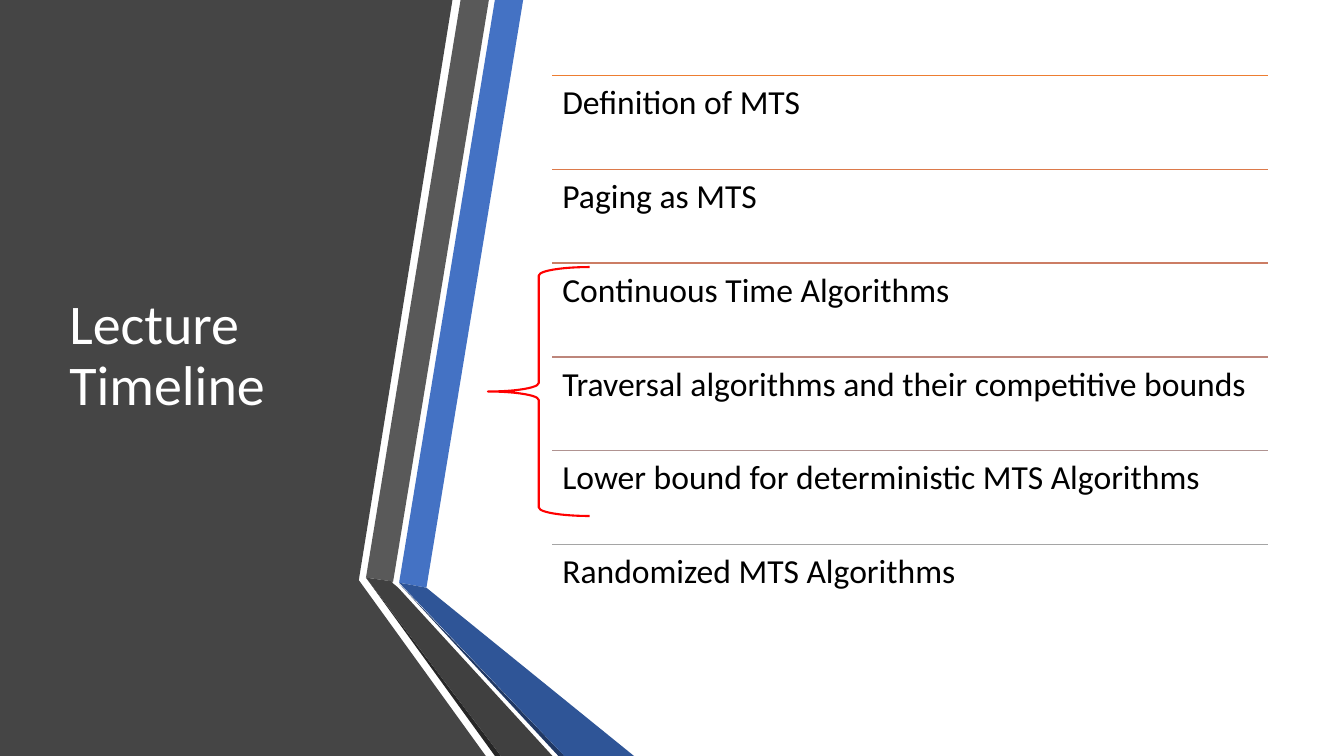
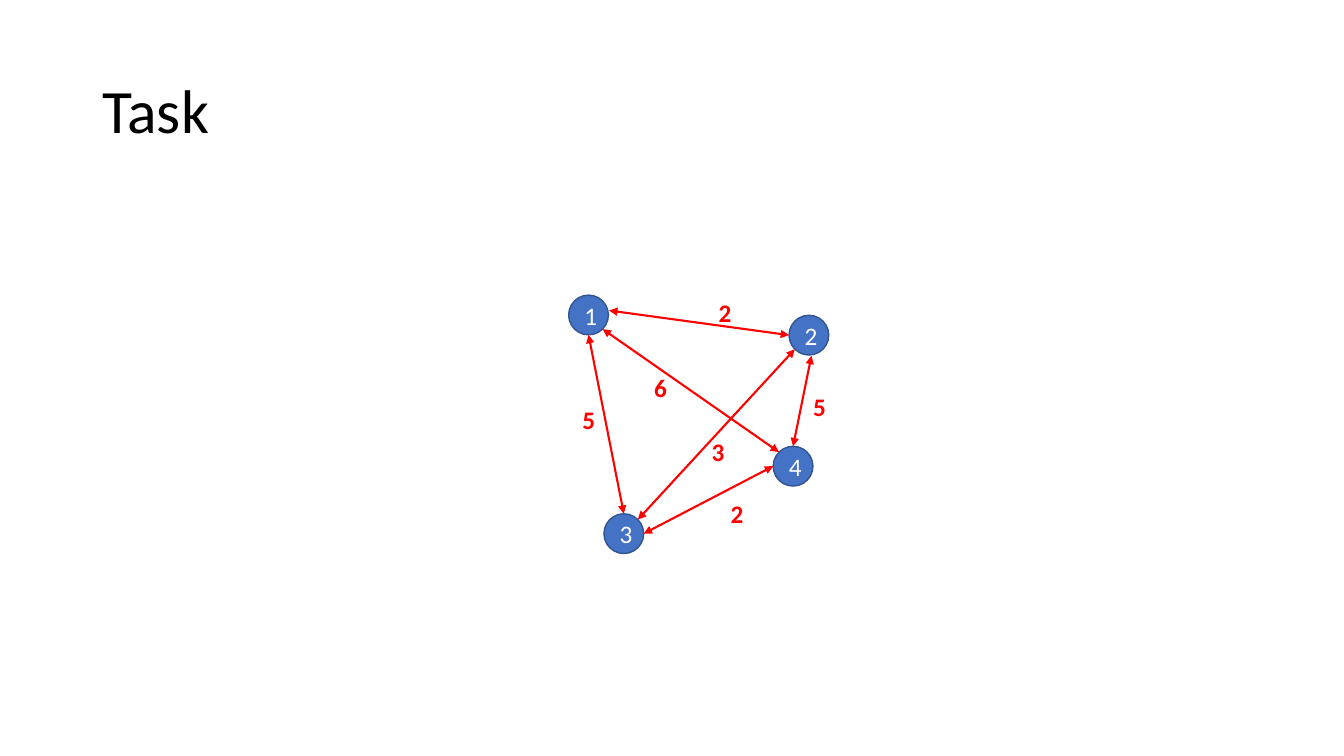
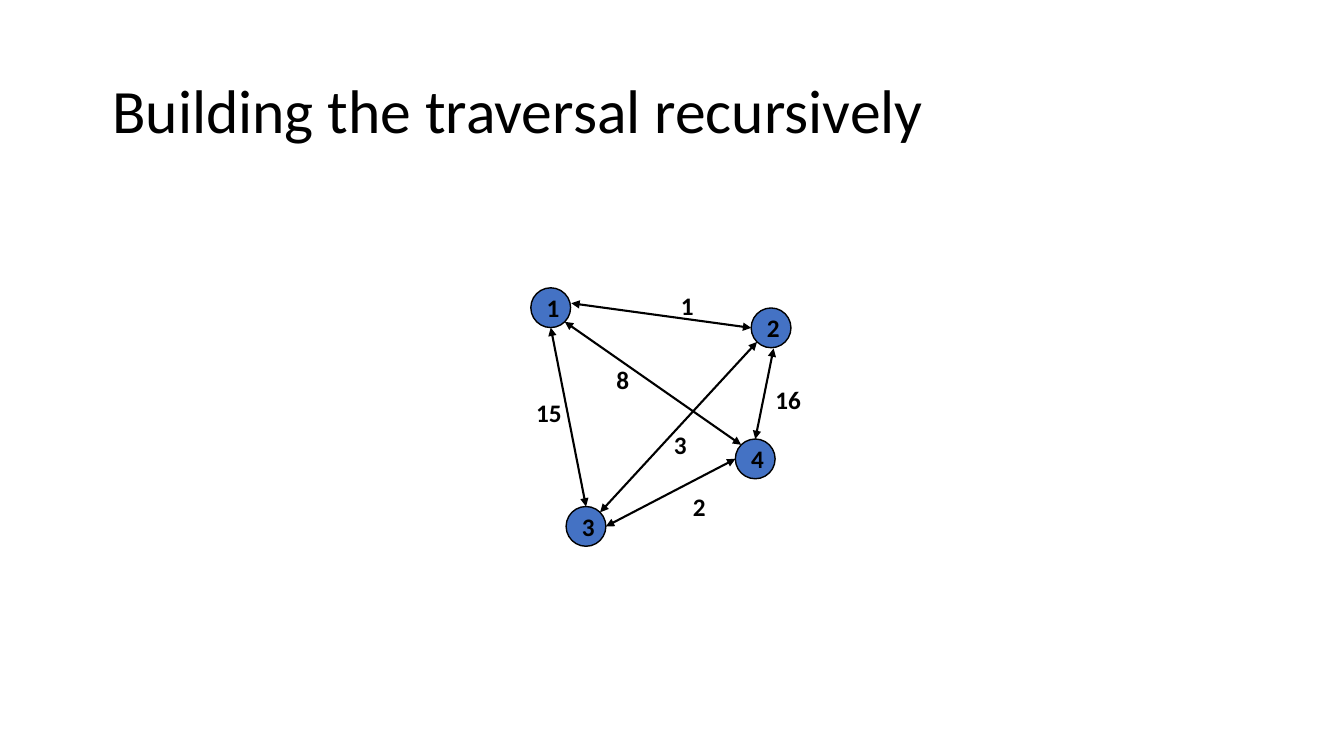
from dataclasses import dataclass
from typing import NamedTuple

from lxml import etree
from pptx import Presentation
from pptx.dml.color import RGBColor
from pptx.enum.shapes import MSO_CONNECTOR, MSO_SHAPE
from pptx.enum.text import MSO_ANCHOR, MSO_AUTO_SIZE, PP_ALIGN
from pptx.oxml.ns import qn
from pptx.util import Pt

STRAIGHT = MSO_CONNECTOR.STRAIGHT
ELLIPSE, LEFT_BRACE = MSO_SHAPE.OVAL, MSO_SHAPE.LEFT_BRACE
TOP, MIDDLE = MSO_ANCHOR.TOP, MSO_ANCHOR.MIDDLE
GROW = MSO_AUTO_SIZE.SHAPE_TO_FIT_TEXT
LEFT, CENTER = PP_ALIGN.LEFT, PP_ALIGN.CENTER

FONT = "Calibri"
BLACK, WHITE, RED, BLUE = "000000", "FFFFFF", "FF0000", "4472C4"
INSET = 7.2
NODE_SIZE = 28.4
DIAGONAL = 0.71


class Point(NamedTuple):
    x: float
    y: float


class Area(NamedTuple):
    left: float
    top: float
    width: float
    height: float


class Weight(NamedTuple):
    text: str
    shift: float = 0


@dataclass(frozen=True)
class TextStyle:
    size: float
    color: str = BLACK
    bold: bool = False
    align: PP_ALIGN = LEFT
    spacing: float = 1.0


@dataclass(frozen=True)
class Band:
    color: str
    corners: list[tuple[float, float]]


@dataclass(frozen=True)
class AgendaItem:
    text: str
    rule_color: str


@dataclass(frozen=True)
class Edge:
    start: str
    start_side: Point
    end: str
    end_side: Point
    label: Point
    nudge: Point = Point(0, 0)


@dataclass(frozen=True)
class Graph:
    title: str
    title_indent: float
    offset: Point
    node_text: TextStyle
    node_outline: str
    edge_color: str
    weights: list[Weight]


TITLE_AREA = Area(66, 28.8, 828, 104.4)

BANDS = [
    Band("454545", [(0, 0), (323.2, 0), (256.3, 414.4), (347, 540), (0, 540)]),
    Band(BLUE, [(285.1, 416.2), (304.6, 419.8), (373.7, 0), (353.5, 0)]),
    Band("595959", [(349.2, 0), (329, 0), (261.4, 412.6), (280.8, 415.4)]),
    Band("262626", [(261.4, 412.6), (353.5, 540), (357.8, 540)]),
    Band("203864", [(285.1, 416.9), (398.9, 540), (403.2, 540)]),
    Band("2F5597", [(285.1, 416.2), (403.2, 540), (452.9, 540), (304.6, 419.8)]),
    Band("404040", [(394.6, 540), (284.4, 419.8), (280.1, 416.2), (280.8, 415.4),
                    (261.4, 412.6), (357.8, 540)]),
]

AGENDA_ROW = Area(394.6, 54, 511.2, 67)
AGENDA = [
    AgendaItem("Definition of MTS", "ED7D31"),
    AgendaItem("Paging as MTS", "DC7A4B"),
    AgendaItem("Continuous Time Algorithms", "CC7D64"),
    AgendaItem("Traversal algorithms and their competitive bounds", "BD867B"),
    AgendaItem("Lower bound for deterministic MTS Algorithms", "B09391"),
    AgendaItem("Randomized MTS Algorithms", "A5A5A5"),
]

# Node corners, and sides as directions from a node's centre
NODES = {
    "1": Point(406.2, 210.8),
    "2": Point(563.6, 225.2),
    "3": Point(431.4, 367),
    "4": Point(552.3, 318.8),
}
ABOVE, BELOW = Point(0, -1), Point(0, 1)
BEFORE, AFTER = Point(-1, 0), Point(1, 0)
ABOVE_BEFORE, ABOVE_AFTER = Point(-DIAGONAL, -DIAGONAL), Point(DIAGONAL, -DIAGONAL)
BELOW_BEFORE, BELOW_AFTER = Point(-DIAGONAL, DIAGONAL), Point(DIAGONAL, DIAGONAL)
EDGES = [
    Edge("1", BELOW, "3", ABOVE, Point(408.8, 285.3)),
    Edge("3", ABOVE_AFTER, "2", BELOW_BEFORE, Point(501.2, 308.4)),
    Edge("1", AFTER, "2", BEFORE, Point(506.2, 208.8), Point(0.5, -3.2)),
    Edge("1", BELOW_AFTER, "4", ABOVE_BEFORE, Point(460.1, 262.1)),
    Edge("4", BEFORE, "3", AFTER, Point(514.8, 352.5)),
    Edge("2", BELOW, "4", ABOVE, Point(573.8, 276.3), Point(1.8, 0.5)),
]
GRAPHS = [
    Graph("Task", 0, Point(0, 0), TextStyle(18, WHITE, align=CENTER), "325491", RED,
          [Weight("5"), Weight("3"), Weight("2"), Weight("6"), Weight("2"), Weight("5")]),
    Graph("Building the traversal recursively", 7, Point(-27, -5.2),
          TextStyle(18, BLACK, True, CENTER), BLACK, BLACK,
          [Weight("15", -6), Weight("3"), Weight("1"), Weight("8"), Weight("2"),
           Weight("16")]),
]


def rgb(color: str) -> RGBColor:
    return RGBColor.from_string(color)


def write(frame, text: str, style: TextStyle) -> None:
    para = frame.paragraphs[0]
    para.alignment = style.align
    para.line_spacing = style.spacing
    span = para.add_run()
    span.text = text
    span.font.name = FONT
    span.font.size = Pt(style.size)
    span.font.bold = style.bold
    span.font.color.rgb = rgb(style.color)


def add_text(page, area: Area, text: str, style: TextStyle, anchor=TOP):
    box = page.shapes.add_textbox(*map(Pt, area))
    frame = box.text_frame
    frame.word_wrap = True
    frame.vertical_anchor = anchor
    write(frame, text, style)
    return frame


def add_title(page, area: Area, text: str, size: float, color: str = BLACK,
              indent: float = 0) -> None:
    style = TextStyle(size, color, spacing=0.9)
    frame = add_text(page, area, text, style, MIDDLE)
    frame.margin_left = Pt(INSET + indent)


def add_line(page, start: Point, end: Point, color: str, width: float,
             arrows: bool = False) -> None:
    line = page.shapes.add_connector(STRAIGHT, *map(Pt, (*start, *end)))
    line.line.color.rgb = rgb(color)
    line.line.width = Pt(width)
    properties = line._element.spPr
    if arrows:
        for tag in ("a:headEnd", "a:tailEnd"):
            etree.SubElement(properties.find(qn("a:ln")), qn(tag), type="triangle")
    etree.SubElement(properties, qn("a:effectLst"))


def add_band(page, band: Band) -> None:
    first, *rest = [(Pt(x), Pt(y)) for x, y in band.corners]
    builder = page.shapes.build_freeform(*first)
    builder.add_line_segments(rest, close=True)
    shape = builder.convert_to_shape()
    shape.shadow.inherit = False
    shape.fill.solid()
    shape.fill.fore_color.rgb = rgb(band.color)
    shape.line.fill.background()


def add_preset(page, kind, area: Area, outline: str, width: float):
    shape = page.shapes.add_shape(kind, *map(Pt, area))
    shape.shadow.inherit = False
    shape.fill.background()
    shape.line.color.rgb = rgb(outline)
    shape.line.width = Pt(width)
    return shape


def draw_timeline(page) -> None:
    for band in BANDS:
        add_band(page, band)
    add_title(page, Area(42.5, 54, 218.9, 401.8), "Lecture Timeline", 40, WHITE)

    # Agenda rows, each under its rule
    left, first_top, width, height = AGENDA_ROW
    for row, item in enumerate(AGENDA):
        top = first_top + row * height
        add_line(page, Point(left, top), Point(left + width, top), item.rule_color, 1)
        frame = add_text(page, Area(left, top, width, height), item.text,
                         TextStyle(24, spacing=0.9))
        frame.margin_top = frame.margin_bottom = Pt(INSET)

    add_preset(page, LEFT_BRACE, Area(348.5, 190.8, 72.7, 177.8), RED, 1.5)


def node_side(node: str, side: Point, offset: Point) -> Point:
    corner, radius = NODES[node], NODE_SIZE / 2
    return Point(corner.x + offset.x + radius * (1 + side.x),
                 corner.y + offset.y + radius * (1 + side.y))


def draw_graph(page, graph: Graph) -> None:
    add_title(page, TITLE_AREA, graph.title, 44, indent=graph.title_indent)
    offset = graph.offset

    # Nodes
    for name, corner in NODES.items():
        area = Area(corner.x + offset.x, corner.y + offset.y, NODE_SIZE, NODE_SIZE)
        node = add_preset(page, ELLIPSE, area, graph.node_outline, 1)
        node.fill.solid()
        node.fill.fore_color.rgb = rgb(BLUE)
        node.text_frame.vertical_anchor = MIDDLE
        write(node.text_frame, name, graph.node_text)

    # Edges
    for edge in EDGES:
        start = node_side(edge.start, edge.start_side, offset)
        start = Point(start.x + edge.nudge.x, start.y + edge.nudge.y)
        end = node_side(edge.end, edge.end_side, offset)
        add_line(page, start, end, graph.edge_color, 1.5, arrows=True)

    # Edge weights
    for edge, weight in zip(EDGES, graph.weights):
        area = Area(edge.label.x + offset.x + weight.shift, edge.label.y + offset.y,
                    37.4, 29.1)
        frame = add_text(page, area, weight.text, TextStyle(18, graph.edge_color, True))
        frame.auto_size = GROW


def main() -> None:
    deck = Presentation()
    deck.slide_width, deck.slide_height = Pt(960), Pt(540)
    blank = deck.slide_layouts[6]
    draw_timeline(deck.slides.add_slide(blank))
    for graph in GRAPHS:
        draw_graph(deck.slides.add_slide(blank), graph)
    deck.save("out.pptx")


if __name__ == "__main__":
    main()
